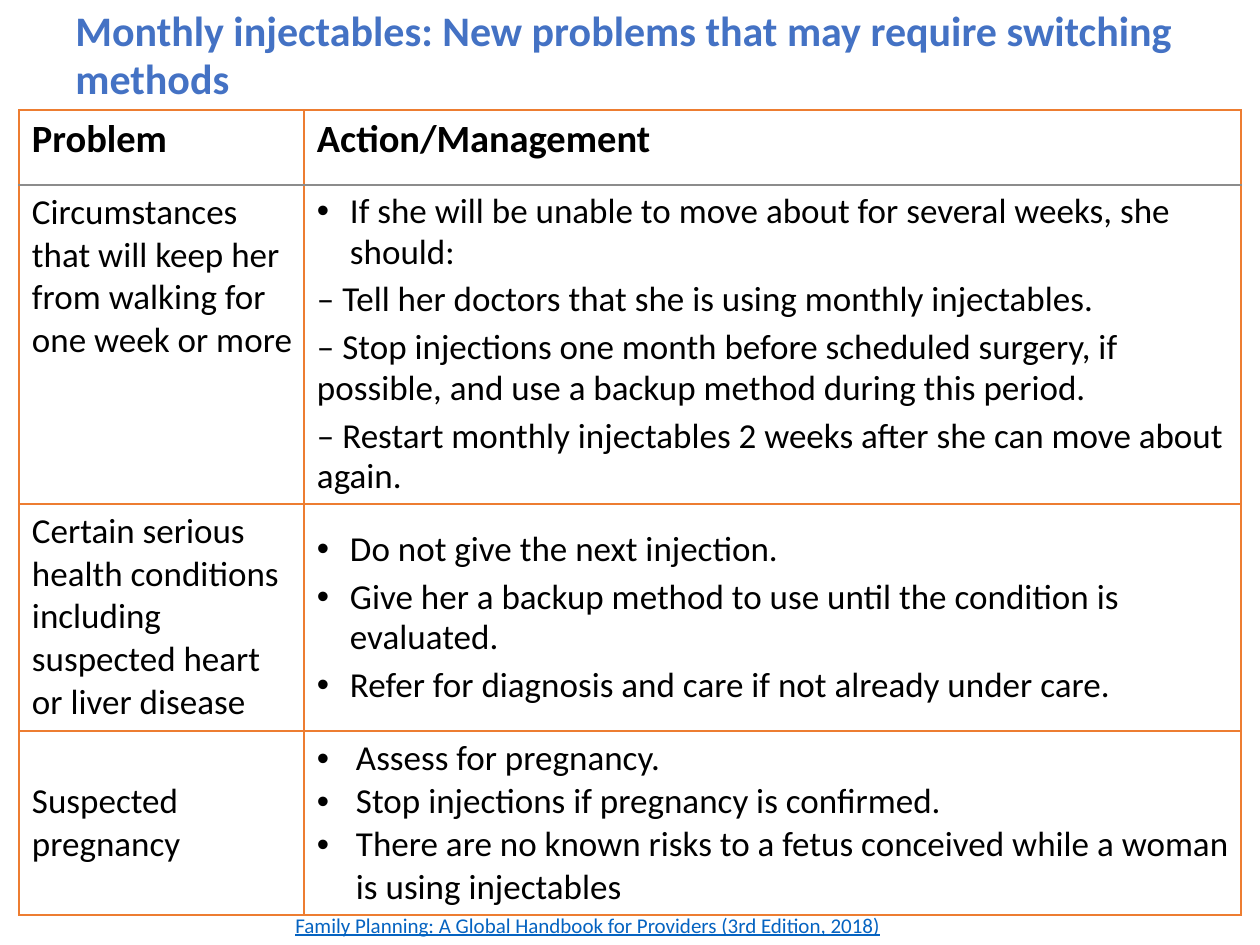
from lxml import etree
from pptx import Presentation
from pptx.dml.color import RGBColor
from pptx.enum.text import MSO_ANCHOR
from pptx.oxml.ns import qn
from pptx.util import Pt

PX = 914400 // 126
FONT = "Calibri"
COLORS = {"title": "4472C4", "text": "000000", "link": "0563C1",
          "border": "ED7D31", "header_rule": "8C8C8C"}

# Content
TITLE = "Monthly injectables: New problems that may require switching methods"
SOURCE = "Family Planning: A Global Handbook for Providers (3rd Edition, 2018)"
HEADERS = ["Problem", "Action/Management"]
# Each row: problem, actions, bullet indent, line spacing, space before, anchors
ROWS = [
    {"problem": "Circumstances that will keep her from walking for one week or more",
     "actions": [
         "• If she will be unable to move about for several weeks, she should:",
         "– Tell her doctors that she is using monthly injectables.",
         "– Stop injections one month before scheduled surgery, if possible, "
         "and use a backup method during this period.",
         "– Restart monthly injectables 2 weeks after she can move about again."],
     "indent": 33, "line": 0.95, "before": 4,
     "anchors": (MSO_ANCHOR.TOP, MSO_ANCHOR.TOP)},
    {"problem": "Certain serious health conditions including suspected heart or liver disease",
     "actions": [
         "• Do not give the next injection.",
         "• Give her a backup method to use until the condition is evaluated.",
         "• Refer for diagnosis and care if not already under care."],
     "indent": 33, "line": 0.95, "before": 4,
     "anchors": (MSO_ANCHOR.TOP, MSO_ANCHOR.MIDDLE)},
    {"problem": "Suspected pregnancy",
     "actions": [
         "• Assess for pregnancy.",
         "• Stop injections if pregnancy is confirmed.",
         "• There are no known risks to a fetus conceived while a woman is using injectables"],
     "indent": 39, "line": 1.0, "before": 0,
     "anchors": (MSO_ANCHOR.MIDDLE, MSO_ANCHOR.MIDDLE)},
]

# Layout in px
TABLE_LEFT, TABLE_TOP = 19, 110
COLUMN_WIDTHS = [285, 937]
ROW_HEIGHTS = [75, 319, 227, 184]


def style(paragraph, size, color, bold=False, underline=None):
    font = paragraph.font
    font.name, font.size, font.bold = FONT, Pt(size), bold
    font.underline = underline
    font.color.rgb = RGBColor.from_string(COLORS[color])


def add_bullet(paragraph, indent):
    properties = paragraph._p.get_or_add_pPr()
    properties.set("marL", str(indent * PX))
    properties.set("indent", str(-indent * PX))
    etree.SubElement(properties, qn("a:buFont")).set("typeface", "Arial")
    etree.SubElement(properties, qn("a:buChar")).set("char", "•")


def add_text(slide, box, text, anchor, line=1.0, **look):
    shape = slide.shapes.add_textbox(*(value * PX for value in box))
    frame = shape.text_frame
    frame.word_wrap = True
    frame.vertical_anchor = anchor
    paragraph = frame.paragraphs[0]
    paragraph.text = text
    paragraph.line_spacing = line
    style(paragraph, **look)


def set_borders(cell, colors):
    properties = cell._tc.get_or_add_tcPr()
    for index, (side, color) in enumerate(colors.items()):
        line = etree.Element(qn(f"a:ln{side}"), w=str(Pt(1)))
        fill = etree.SubElement(line, qn("a:solidFill"))
        etree.SubElement(fill, qn("a:srgbClr")).set("val", COLORS[color])
        properties.insert(index, line)


def fill_cell(cell, texts, size=20, bold=False, indent=0, line=1.0, before=0,
              anchor=MSO_ANCHOR.TOP):
    cell.margin_left = 13 * PX
    cell.margin_right = cell.margin_top = cell.margin_bottom = 6 * PX
    cell.vertical_anchor = anchor
    frame = cell.text_frame
    for index, text in enumerate(texts):
        paragraph = frame.add_paragraph() if index else frame.paragraphs[0]
        paragraph.text = text.removeprefix("• ")
        if text.startswith("• "):
            add_bullet(paragraph, indent)
        paragraph.line_spacing = line
        paragraph.space_before = Pt(before if index else 0)
        style(paragraph, size, "text", bold)


def add_problem_table(slide):
    table = slide.shapes.add_table(
        len(ROW_HEIGHTS), len(COLUMN_WIDTHS), TABLE_LEFT * PX, TABLE_TOP * PX,
        sum(COLUMN_WIDTHS) * PX, sum(ROW_HEIGHTS) * PX).table
    table.first_row = table.horz_banding = False
    for column, width in zip(table.columns, COLUMN_WIDTHS):
        column.width = width * PX
    for row, height in zip(table.rows, ROW_HEIGHTS):
        row.height = height * PX

    for column, header in enumerate(HEADERS):
        fill_cell(table.cell(0, column), [header], size=22, bold=True)
    for number, row in enumerate(ROWS, start=1):
        problem_anchor, action_anchor = row["anchors"]
        fill_cell(table.cell(number, 0), [row["problem"]], anchor=problem_anchor)
        fill_cell(table.cell(number, 1), row["actions"], indent=row["indent"],
                  line=row["line"], before=row["before"], anchor=action_anchor)

    # Orange grid, with a grey rule under the header
    for number, row in enumerate(table.rows):
        for cell in row.cells:
            cell.fill.background()
            set_borders(cell, {
                "L": "border", "R": "border",
                "T": "header_rule" if number == 1 else "border",
                "B": "header_rule" if number == 0 else "border"})


def main():
    presentation = Presentation()
    presentation.slide_width, presentation.slide_height = 1260 * PX, 945 * PX
    slide = presentation.slides.add_slide(presentation.slide_layouts[6])
    add_problem_table(slide)
    add_text(slide, (63, 20, 1134, 73), TITLE, MSO_ANCHOR.MIDDLE, line=0.95,
             size=24, color="title", bold=True)
    add_text(slide, (283, 906, 713, 30), SOURCE, MSO_ANCHOR.TOP,
             size=12, color="link", underline=True)
    presentation.save("out.pptx")


if __name__ == "__main__":
    main()
